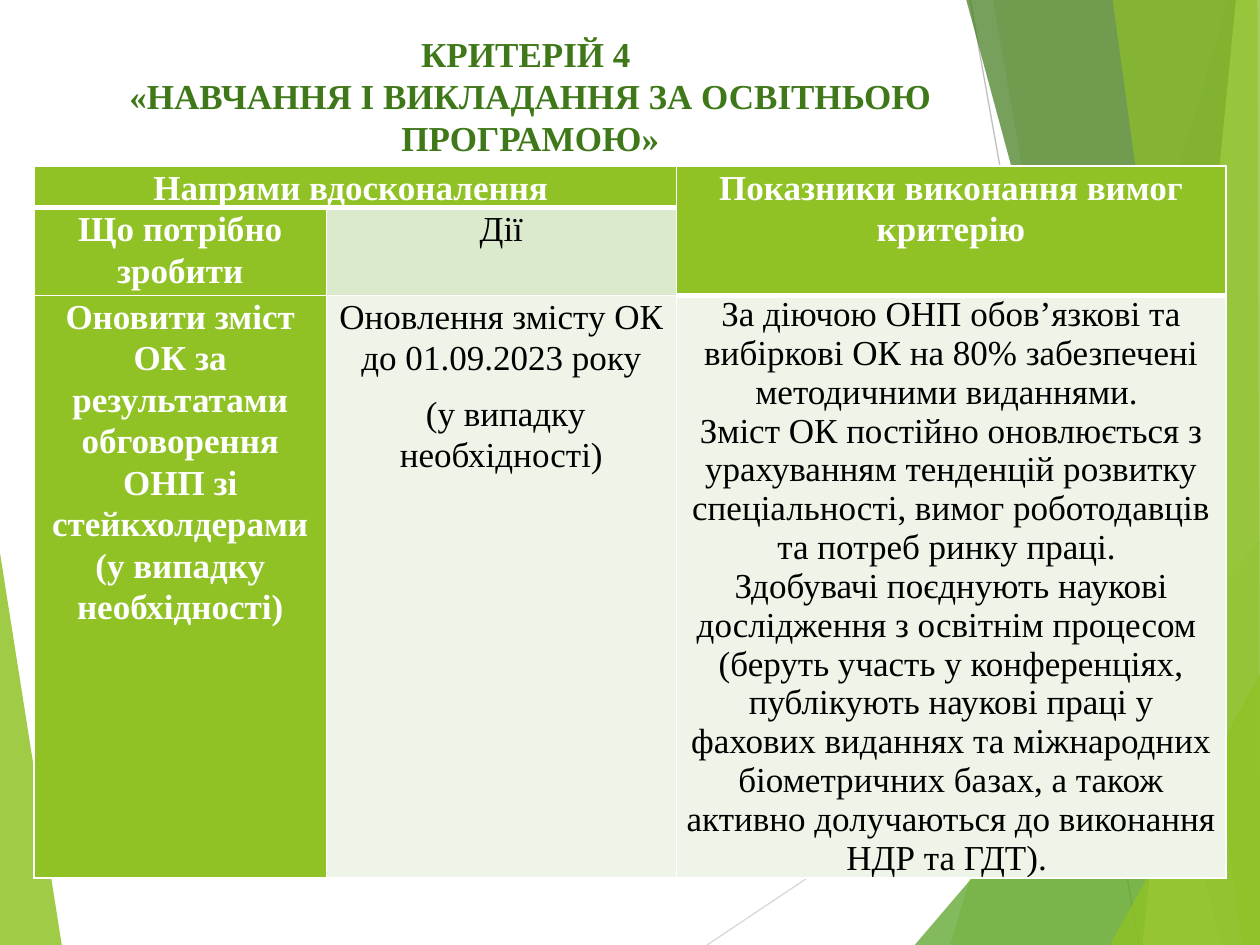
from dataclasses import dataclass

from lxml import etree
from pptx import Presentation
from pptx.dml.color import RGBColor
from pptx.enum.shapes import MSO_CONNECTOR
from pptx.enum.text import MSO_AUTO_SIZE, PP_ALIGN
from pptx.oxml.ns import qn
from pptx.util import Pt

CENTER = PP_ALIGN.CENTER
FIT_SHAPE = MSO_AUTO_SIZE.SHAPE_TO_FIT_TEXT
STRAIGHT = MSO_CONNECTOR.STRAIGHT
FONT = "Times New Roman"
FONT_SIZE = 20
WIDTH, HEIGHT = 720, 540
COLORS = {
    "lime": "90C226",
    "green": "54A021",
    "dark_green": "3F7819",
    "pale_lime": "C0E474",
    "light_band": "DBE9CD",
    "lighter_band": "EEF4E8",
    "light_gray": "D9D9D9",
    "gray": "BFBFBF",
    "white": "FFFFFF",
    "black": "000000",
}


@dataclass
class Facet:
    points: list[tuple[float, float]]
    color: str
    opacity: int


@dataclass
class Ray:
    start: tuple[float, float]
    end: tuple[float, float]
    color: str


@dataclass
class TableCell:
    row: int
    column: int
    paragraphs: list[str]
    fill: str
    color: str = "black"
    bold: bool = False
    spacing: float | None = 1.07
    space_after: float = 8


RAYS = [
    Ray((404, HEIGHT), (WIDTH, 329), "light_gray"),
    Ray((554.4, 0), (651, HEIGHT), "gray"),
]
LEFT_FACET = Facet([(0, 316), (35.3, HEIGHT), (0, HEIGHT)], "lime", 85)
RIGHT_FACETS = [
    Facet([(702, 0), (543, HEIGHT), (WIDTH, HEIGHT), (WIDTH, 0)], "lime", 30),
    Facet([(567.4, 0), (661.7, HEIGHT), (WIDTH, HEIGHT), (WIDTH, 0)], "lime", 20),
    Facet([(522.7, HEIGHT), (WIDTH, 309), (WIDTH, HEIGHT)], "green", 72),
    Facet([(552.2, 0), (698.4, HEIGHT), (WIDTH, HEIGHT), (WIDTH, 0)], "dark_green", 70),
    Facet([(706.3, 0), (653, HEIGHT), (WIDTH, HEIGHT), (WIDTH, 0)], "pale_lime", 70),
    Facet([(635.8, 0), (710, HEIGHT), (WIDTH, HEIGHT), (718.6, 0)], "lime", 65),
    Facet([(634.3, HEIGHT), (WIDTH, 385.2), (WIDTH, HEIGHT)], "lime", 80),
]
TITLE = ["КРИТЕРІЙ 4 ", "«НАВЧАННЯ І ВИКЛАДАННЯ ЗА ОСВІТНЬОЮ ПРОГРАМОЮ»"]
COLUMN_WIDTHS = [167, 200, 314]
ROW_HEIGHTS = [23, 50, 333]
HEADER_EDGE = {(0, 0), (0, 1), (0, 2), (1, 2)}
CELLS = [
    TableCell(0, 0, ["Напрями вдосконалення "], "lime", "white", True),
    TableCell(0, 2, ["Показники виконання вимог критерію"], "lime", "white", True),
    TableCell(1, 0, ["Що потрібно зробити"], "lime", "white", True),
    TableCell(1, 1, ["Дії"], "light_band"),
    TableCell(2, 0, [
        "Оновити зміст ОК за результатами обговорення ОНП зі "
        "стейкхолдерами (у випадку необхідності)",
    ], "lime", "white", True),
    TableCell(2, 1, [
        "Оновлення змісту ОК до 01.09.2023 року",
        " (у випадку необхідності)",
    ], "lighter_band"),
    TableCell(2, 2, [
        "За діючою ОНП обов’язкові та вибіркові ОК на 80% забезпечені "
        "методичними виданнями. ",
        "Зміст ОК постійно оновлюється з урахуванням тенденцій розвитку "
        "спеціальності, вимог роботодавців та потреб ринку праці. ",
        "Здобувачі поєднують наукові дослідження з освітнім процесом  "
        "(беруть участь у конференціях, публікують наукові праці у фахових "
        "виданнях та міжнародних біометричних базах, а також активно "
        "долучаються до виконання НДР та ГДТ). ",
    ], "lighter_band", spacing=None, space_after=0),
]


def rgb(name: str) -> RGBColor:
    return RGBColor.from_string(COLORS[name])


def draw_facet(slide, facet: Facet) -> None:
    points = [(Pt(x), Pt(y)) for x, y in facet.points]
    builder = slide.shapes.build_freeform(*points[0])
    builder.add_line_segments(points[1:], close=True)
    shape = builder.convert_to_shape()
    shape.shadow.inherit = False
    shape.line.fill.background()
    shape.fill.solid()
    shape.fill.fore_color.rgb = rgb(facet.color)
    color = shape.element.spPr.find(qn("a:solidFill")).find(qn("a:srgbClr"))
    etree.SubElement(color, qn("a:alpha"), val=str(facet.opacity * 1000))


def draw_ray(slide, ray: Ray) -> None:
    ends = [Pt(value) for value in (*ray.start, *ray.end)]
    connector = slide.shapes.add_connector(STRAIGHT, *ends)
    connector.line.color.rgb = rgb(ray.color)
    connector.line.width = Pt(0.75)
    etree.SubElement(connector.element.spPr, qn("a:effectLst"))


def write_paragraphs(text_frame, texts: list[str], color: str, bold: bool,
                     spacing: float | None = None, space_after: float = 0) -> None:
    for index, text in enumerate(texts):
        paragraph = text_frame.add_paragraph() if index else text_frame.paragraphs[0]
        paragraph.alignment = CENTER
        paragraph.line_spacing = spacing
        paragraph.space_after = Pt(space_after)
        run = paragraph.add_run()
        run.text = text
        run.font.name = FONT
        run.font.size = Pt(FONT_SIZE)
        run.font.bold = bold
        run.font.color.rgb = rgb(color)


def draw_title(slide) -> None:
    box = slide.shapes.add_textbox(Pt(31), Pt(15), Pt(544), Pt(80))
    box.text_frame.word_wrap = True
    box.text_frame.auto_size = FIT_SHAPE
    write_paragraphs(box.text_frame, TITLE, "dark_green", True)


def set_borders(cell, row: int, column: int) -> None:
    widths = {
        "a:lnL": 1,
        "a:lnR": 1,
        "a:lnT": 3 if (row - 1, column) in HEADER_EDGE else 1,
        "a:lnB": 3 if (row, column) in HEADER_EDGE else 1,
    }
    properties = cell._tc.get_or_add_tcPr()
    for index, (tag, width) in enumerate(widths.items()):
        line = etree.Element(qn(tag), w=str(Pt(width)))
        fill = etree.SubElement(line, qn("a:solidFill"))
        etree.SubElement(fill, qn("a:srgbClr"), val=COLORS["white"])
        properties.insert(index, line)


def fill_cell(table, content: TableCell) -> None:
    cell = table.cell(content.row, content.column)
    cell.margin_left = cell.margin_right = Pt(3.6)
    cell.margin_top = cell.margin_bottom = Pt(0)
    cell.fill.solid()
    cell.fill.fore_color.rgb = rgb(content.fill)
    write_paragraphs(cell.text_frame, content.paragraphs, content.color,
                     content.bold, content.spacing, content.space_after)


def draw_table(slide) -> None:
    frame = slide.shapes.add_table(
        len(ROW_HEIGHTS), len(COLUMN_WIDTHS), Pt(19.5), Pt(95),
        Pt(sum(COLUMN_WIDTHS)), Pt(sum(ROW_HEIGHTS)))
    table = frame.table
    table.first_row = table.horz_banding = False
    for column, width in zip(table.columns, COLUMN_WIDTHS):
        column.width = Pt(width)
    for row, height in zip(table.rows, ROW_HEIGHTS):
        row.height = Pt(height)
    table.cell(0, 0).merge(table.cell(0, 1))
    table.cell(0, 2).merge(table.cell(1, 2))
    for content in CELLS:
        fill_cell(table, content)
    for row in range(len(ROW_HEIGHTS)):
        for column in range(len(COLUMN_WIDTHS)):
            set_borders(table.cell(row, column), row, column)


def main() -> None:
    presentation = Presentation()
    presentation.slide_width, presentation.slide_height = Pt(WIDTH), Pt(HEIGHT)
    slide = presentation.slides.add_slide(presentation.slide_layouts[6])
    draw_facet(slide, LEFT_FACET)
    for ray in RAYS:
        draw_ray(slide, ray)
    for facet in RIGHT_FACETS:
        draw_facet(slide, facet)
    draw_table(slide)
    draw_title(slide)
    presentation.save("out.pptx")


if __name__ == "__main__":
    main()
